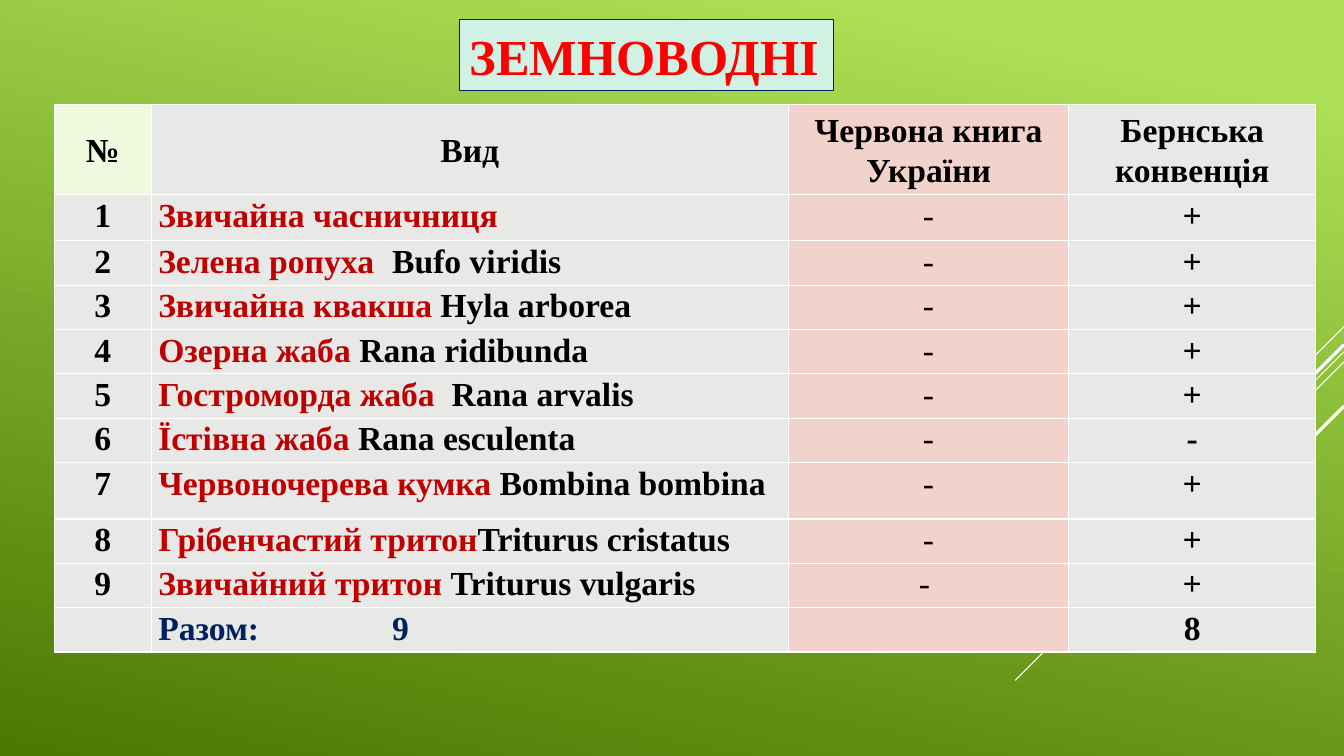
"""Build a slide listing amphibian species and their protection status."""
from dataclasses import dataclass

from lxml import etree
from pptx import Presentation
from pptx import util as u
from pptx.dml.color import RGBColor
from pptx.enum import shapes, text
from pptx.oxml import ns

FONT = "Times New Roman"
BLACK, WHITE, RED, NAVY = "000000", "FFFFFF", "C00000", "002060"
GREY, PINK, LIME = "E8E9E7", "F2D3CC", "EEF9DD"
COLUMN_FILLS = [GREY, GREY, PINK, GREY]
COLUMN_WIDTHS = [0.96, 6.32, 2.78, 2.45]
ROW_HEIGHTS = [0.89, 0.46] + [0.44] * 5 + [0.56] + [0.44] * 3
NAME_TABS = [2.32, 2.91]
HEADINGS = ["№", "Вид", "Червона книга України", "Бернська конвенція"]


@dataclass
class Ray:
    """A diagonal line running down from the right edge."""
    top: float
    reach: float
    weight: float


@dataclass
class Species:
    """A species with its marks in the two lists."""
    name: str
    latin: str
    red_book: str = "-"
    bern: str = "+"


@dataclass
class Span:
    """A piece of text in one colour."""
    words: str
    color: str = BLACK
    bold: bool = True


RAYS = [
    Ray(3.24, 1, 0.75),
    Ray(3.49, 3.26, 0.75),
    Ray(3.59, 2.07, 0.75),
    Ray(3.42, 1.91, 2.25),
    Ray(4.03, 1.39, 2.25),
]

SPECIES = [
    Species("Звичайна часничниця", ""),
    Species("Зелена ропуха\t", "Bufo viridis"),
    Species("Звичайна квакша ", "Hyla arborea"),
    Species("Озерна жаба ", "Rana ridibunda"),
    Species("Гостроморда жаба\t", "Rana arvalis"),
    Species("Їстівна жаба ", "Rana esculenta", bern="-"),
    Species("Червоночерева кумка ", "Bombina bombina"),
    Species("Грібенчастий тритон", "Triturus cristatus"),
    Species("Звичайний тритон ", "Triturus vulgaris", red_book="- "),
]


def rgb(color: str) -> RGBColor:
    """Turn a hex string into a colour."""
    return RGBColor.from_string(color)


def style_font(font, size: float, color: str, bold: bool) -> None:
    """Set typeface, size, colour and weight."""
    font.name = FONT
    font.size = u.Pt(size)
    font.bold = bold
    font.color.rgb = rgb(color)


def paint_background(page) -> None:
    """Fill the page with a green gradient."""
    fill = page.background.fill
    fill.gradient()
    fill.gradient_angle = 258
    for stop, position, color in zip(fill.gradient_stops, (0.1, 1), ("ACDF55", "4C7800")):
        stop.position = position
        stop.color.rgb = rgb(color)


def draw_ray(page, ray: Ray) -> None:
    """Draw a white line at 45 degrees."""
    right = 13.33
    line = page.shapes.add_connector(
        shapes.MSO_CONNECTOR.STRAIGHT, u.Inches(right), u.Inches(ray.top),
        u.Inches(right - ray.reach), u.Inches(ray.top + ray.reach))
    line.line.color.rgb = rgb(WHITE)
    line.line.width = u.Pt(ray.weight)
    etree.SubElement(line._element.spPr, ns.qn("a:effectLst"))


def draw_title(page) -> None:
    """Draw the framed title."""
    box = page.shapes.add_shape(
        shapes.MSO_SHAPE.RECTANGLE, u.Inches(4.56), u.Inches(0.19), u.Inches(3.71), u.Inches(0.71))
    box.shadow.inherit = False
    box.fill.solid()
    box.fill.fore_color.rgb = rgb("D1F1E4")
    box.line.color.rgb = rgb(NAVY)
    box.line.width = u.Pt(0.75)
    frame = box.text_frame
    frame.text = "ЗЕМНОВОДНІ"
    frame.word_wrap = False
    frame.auto_size = text.MSO_AUTO_SIZE.SHAPE_TO_FIT_TEXT
    para = frame.paragraphs[0]
    para.alignment = text.PP_ALIGN.LEFT
    style_font(para.runs[0].font, 36, "FF0000", True)


def frame_cell(cell, fill: str) -> None:
    """Give a cell white borders, a fill and narrow margins."""
    properties = cell._tc.get_or_add_tcPr()
    for side in "LRTB":
        border = etree.SubElement(properties, ns.qn(f"a:ln{side}"), w=str(u.Pt(1)))
        solid = etree.SubElement(border, ns.qn("a:solidFill"))
        etree.SubElement(solid, ns.qn("a:srgbClr"), val=WHITE)
    cell.fill.solid()
    cell.fill.fore_color.rgb = rgb(fill)
    cell.margin_left = cell.margin_right = u.Inches(0.07)
    cell.margin_top = cell.margin_bottom = 0


def write_cell(cell, spans: list[Span], centered: bool) -> None:
    """Write coloured spans into a cell."""
    para = cell.text_frame.paragraphs[0]
    if not centered:
        tabs = etree.SubElement(para._p.get_or_add_pPr(), ns.qn("a:tabLst"))
        for stop in NAME_TABS:
            etree.SubElement(tabs, ns.qn("a:tab"), pos=str(u.Inches(stop)), algn="l")
    para.alignment = text.PP_ALIGN.CENTER if centered else text.PP_ALIGN.LEFT
    para.line_spacing = 1.07
    for span in spans:
        if span.words:
            run = para.add_run()
            run.text = span.words
            style_font(run.font, 24, span.color, span.bold)


def table_rows() -> list[list[list[Span]]]:
    """List the spans of every cell, row by row."""
    rows = [[[Span(heading)] for heading in HEADINGS]]
    for number, kind in enumerate(SPECIES, 1):
        rows.append([
            [Span(str(number))],
            [Span(kind.name, RED), Span(kind.latin)],
            [Span(kind.red_book, bold=False)],
            [Span(kind.bern)],
        ])
    protected = sum(kind.bern == "+" for kind in SPECIES)
    rows.append([[], [Span(f"Разом:\t{len(SPECIES)}", NAVY)], [], [Span(str(protected))]])
    return rows


def draw_table(page) -> None:
    """Draw the species table."""
    rows = table_rows()
    table = page.shapes.add_table(
        len(rows), len(COLUMN_WIDTHS), u.Inches(0.54), u.Inches(1.04),
        u.Inches(sum(COLUMN_WIDTHS)), u.Inches(sum(ROW_HEIGHTS))).table
    table.first_row = table.horz_banding = False
    for column, width in zip(table.columns, COLUMN_WIDTHS):
        column.width = u.Inches(width)
    for row, height in zip(table.rows, ROW_HEIGHTS):
        row.height = u.Inches(height)
    for r, row_spans in enumerate(rows):
        for c, spans in enumerate(row_spans):
            cell = table.cell(r, c)
            frame_cell(cell, LIME if r == c == 0 else COLUMN_FILLS[c])
            write_cell(cell, spans, centered=r == 0 or c != 1)
            if r == 0:
                cell.vertical_anchor = text.MSO_ANCHOR.MIDDLE


def main() -> None:
    """Build and save the deck."""
    deck = Presentation()
    deck.slide_width, deck.slide_height = u.Inches(13.33), u.Inches(7.5)
    page = deck.slides.add_slide(deck.slide_layouts[6])
    paint_background(page)
    for ray in RAYS:
        draw_ray(page, ray)
    draw_title(page)
    draw_table(page)
    deck.save("out.pptx")


if __name__ == "__main__":
    main()
